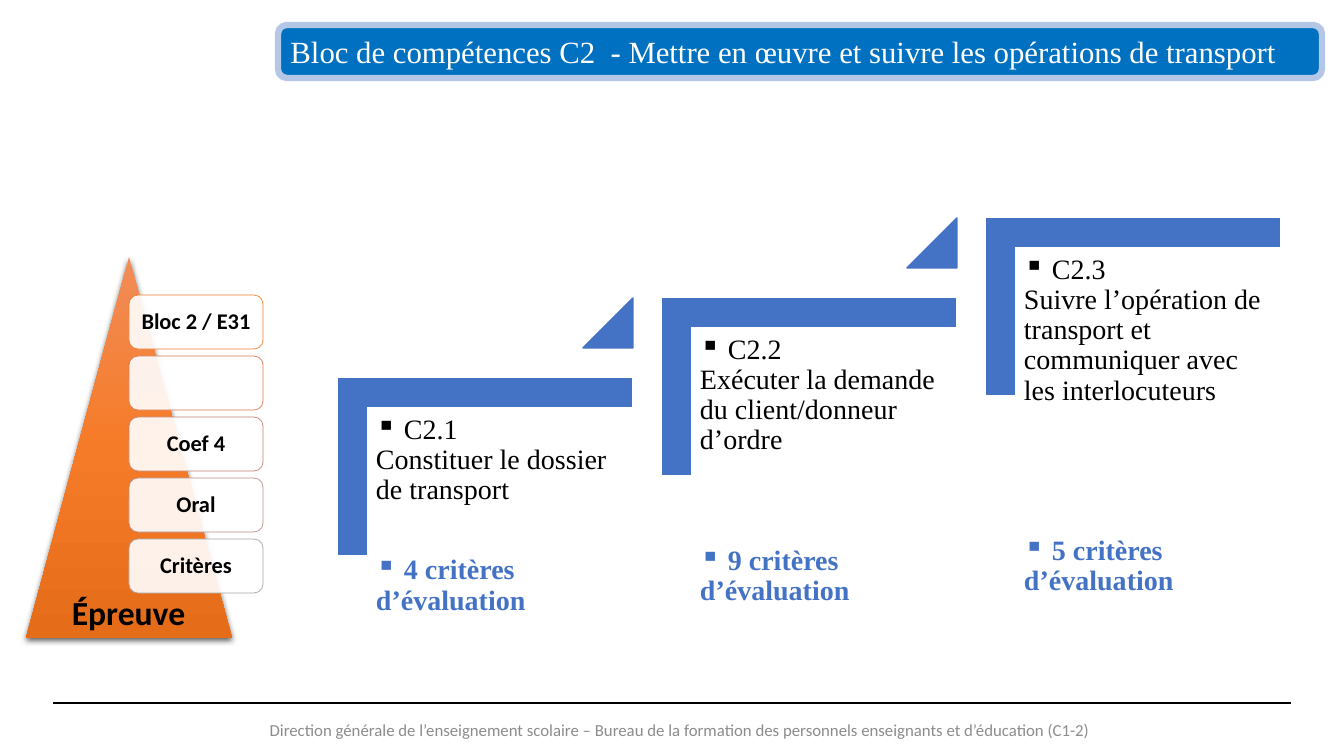
import pptx
import pptx.dml.color
import pptx.enum.shapes
import pptx.enum.text
import pptx.oxml
import pptx.oxml.ns
import pptx.util

SHAPES = pptx.enum.shapes.MSO_SHAPE
ALIGN = pptx.enum.text.PP_ALIGN
ANCHOR = pptx.enum.text.MSO_ANCHOR
NAMESPACE = pptx.oxml.ns.nsdecls("a")

TITLE = "Bloc de compétences C2  - Mettre en œuvre et suivre les opérations de transport"
FOOTER = (
    "Direction générale de l’enseignement scolaire – "
    "Bureau de la formation des personnels enseignants et d’éducation (C1-2)"
)
STEPS = [
    ("C2.1", "Constituer le dossier de transport", "4 critères d’évaluation"),
    ("C2.2", "Exécuter la demande du client/donneur d’ordre", "9 critères d’évaluation"),
    ("C2.3", "Suivre l’opération de transport et communiquer avec les interlocuteurs",
     "5 critères d’évaluation"),
]
EXAM_NAME = "Épreuve"
EXAM_LABELS = [
    ("Bloc 2 / E31", "ED7D31"),
    ("", "D87A51"),
    ("Coef 4", "C48170"),
    ("Oral", "B4908B"),
    ("Critères", "A5A5A5"),
]
PYRAMID_STOPS = [(0, "F18C57"), (50, "F67B28"), (100, "E56C19")]

BLUE = "4472C4"
SERIF = "Times New Roman"
TITLE_FONT = {"name": SERIF, "size": 22, "color": "FFFFFF"}
STEP_FONT = {"name": SERIF, "size": 20, "color": "000000"}
CRITERIA_FONT = {"name": SERIF, "size": 20, "color": BLUE, "bold": True}
LABEL_FONT = {"name": "Calibri", "size": 16, "color": "000000", "bold": True}
EXAM_FONT = {"name": "Calibri", "size": 24, "color": "000000", "bold": True}
FOOTER_FONT = {"name": "Calibri", "size": 12, "color": "8C8C8C"}

STEP_DX, STEP_DY = 324, -80
LABEL_PITCH = 61


def px(value):
    return pptx.util.Emu(round(value * 914400 / 100.8))


def rgb(value):
    return pptx.dml.color.RGBColor.from_string(value)


def add_box(slide, kind, box, fill, line, width):
    shape = slide.shapes.add_shape(kind, *map(px, box))
    shape.shadow.inherit = False
    if fill:
        shape.fill.solid()
        shape.fill.fore_color.rgb = rgb(fill)
    if line:
        shape.line.color.rgb = rgb(line)
        shape.line.width = pptx.util.Pt(width)
    else:
        shape.line.fill.background()
    return shape


def set_frame(shape, anchor, inset=None):
    frame = shape.text_frame
    frame.word_wrap = True
    frame.vertical_anchor = anchor
    if inset is not None:
        for side in ("left", "top", "right", "bottom"):
            setattr(frame, f"margin_{side}", px(inset))
    return frame


def write(paragraph, text, font, **layout):
    for name, value in layout.items():
        setattr(paragraph, name, value)
    paragraph.text = text
    for run in paragraph.runs:
        for name, value in font.items():
            if name == "color":
                run.font.color.rgb = rgb(value)
            else:
                setattr(run.font, name, pptx.util.Pt(value) if name == "size" else value)


def add_text(slide, box, text, font):
    shape = slide.shapes.add_textbox(*map(px, box))
    frame = set_frame(shape, ANCHOR.MIDDLE)
    write(frame.paragraphs[0], text, font, alignment=ALIGN.CENTER)


def add_bullet(paragraph):
    bullet = pptx.oxml.parse_xml(f'<a:buChar {NAMESPACE} char="▪"/>')
    paragraph._p.get_or_add_pPr().append(bullet)


def add_footer(slide):
    rule = slide.shapes.add_connector(
        pptx.enum.shapes.MSO_CONNECTOR.STRAIGHT, px(53), px(703), px(1291), px(703))
    rule.line.color.rgb = rgb("000000")
    rule.line.width = pptx.util.Pt(0.8)
    rule._element.spPr.append(pptx.oxml.parse_xml(f"<a:effectLst {NAMESPACE}/>"))
    add_text(slide, (53, 704, 1254, 52), FOOTER, FOOTER_FONT)


def add_step(slide, index, code, task, criteria):
    x, y = index * STEP_DX, index * STEP_DY
    corner = add_box(slide, SHAPES.CORNER, (397 + x, 320 + y, 176, 293), BLUE, BLUE, 1)
    corner.rotation = 90
    for position in range(2):
        corner.adjustments[position] = 0.16

    shape = slide.shapes.add_textbox(*map(px, (368 + x, 407 + y, 265, 232)))
    frame = set_frame(shape, ANCHOR.TOP, 8)
    heading, result = frame.paragraphs[0], frame.add_paragraph()
    write(heading, f" {code}\v{task}", STEP_FONT, line_spacing=0.9)
    write(result, f" {criteria}", CRITERIA_FONT, line_spacing=0.9,
          space_before=px(50 + 40 * index))
    for paragraph in (heading, result):
        add_bullet(paragraph)

    if index < len(STEPS) - 1:
        wedge = add_box(slide, SHAPES.ISOSCELES_TRIANGLE, (583 + x, 298 + y, 50, 50),
                        BLUE, BLUE, 1)
        wedge.adjustments[0] = 1


def add_pyramid(slide):
    pyramid = add_box(slide, SHAPES.ISOSCELES_TRIANGLE, (26, 257, 206, 381), None, None, 0)
    stops = "".join(
        f'<a:gs pos="{place * 1000}"><a:srgbClr val="{color}"/></a:gs>'
        for place, color in PYRAMID_STOPS)
    gradient = pptx.oxml.parse_xml(
        f'<a:gradFill {NAMESPACE} rotWithShape="1"><a:gsLst>{stops}</a:gsLst>'
        '<a:lin ang="5400000" scaled="0"/></a:gradFill>')
    shadow = pptx.oxml.parse_xml(
        f'<a:outerShdw {NAMESPACE} blurRad="57150" dist="19050" dir="5400000" '
        'algn="ctr" rotWithShape="0"><a:srgbClr val="000000">'
        '<a:alpha val="63000"/></a:srgbClr></a:outerShdw>')
    properties = pyramid._element.spPr
    properties.find(pptx.oxml.ns.qn("a:prstGeom")).addnext(gradient)
    properties.find(pptx.oxml.ns.qn("a:effectLst")).append(shadow)


def add_label(slide, index, text, color):
    label = add_box(slide, SHAPES.ROUNDED_RECTANGLE,
                    (129, 295 + index * LABEL_PITCH, 134, 54), "FFFFFF", color, 0.5)
    white = label._element.spPr.find(
        f'{pptx.oxml.ns.qn("a:solidFill")}/{pptx.oxml.ns.qn("a:srgbClr")}')
    white.append(pptx.oxml.parse_xml(f'<a:alpha {NAMESPACE} val="90000"/>'))
    if text:
        frame = set_frame(label, ANCHOR.MIDDLE, 7)
        write(frame.paragraphs[0], text, LABEL_FONT, alignment=ALIGN.CENTER, line_spacing=0.9)


def main():
    presentation = pptx.Presentation()
    presentation.slide_width, presentation.slide_height = px(1344), px(756)
    slide = presentation.slides.add_slide(presentation.slide_layouts[6])

    add_footer(slide)
    for index, step in enumerate(STEPS):
        add_step(slide, index, *step)

    banner = add_box(slide, SHAPES.ROUNDED_RECTANGLE, (278, 25, 1044, 53),
                     "0070C0", "B4C7E7", 4.5)
    frame = set_frame(banner, ANCHOR.MIDDLE)
    write(frame.paragraphs[0], TITLE, TITLE_FONT, alignment=ALIGN.LEFT)

    add_pyramid(slide)
    for index, label in enumerate(EXAM_LABELS):
        add_label(slide, index, *label)
    add_text(slide, (34, 587, 189, 50), EXAM_NAME, EXAM_FONT)

    presentation.save("out.pptx")


if __name__ == "__main__":
    main()
